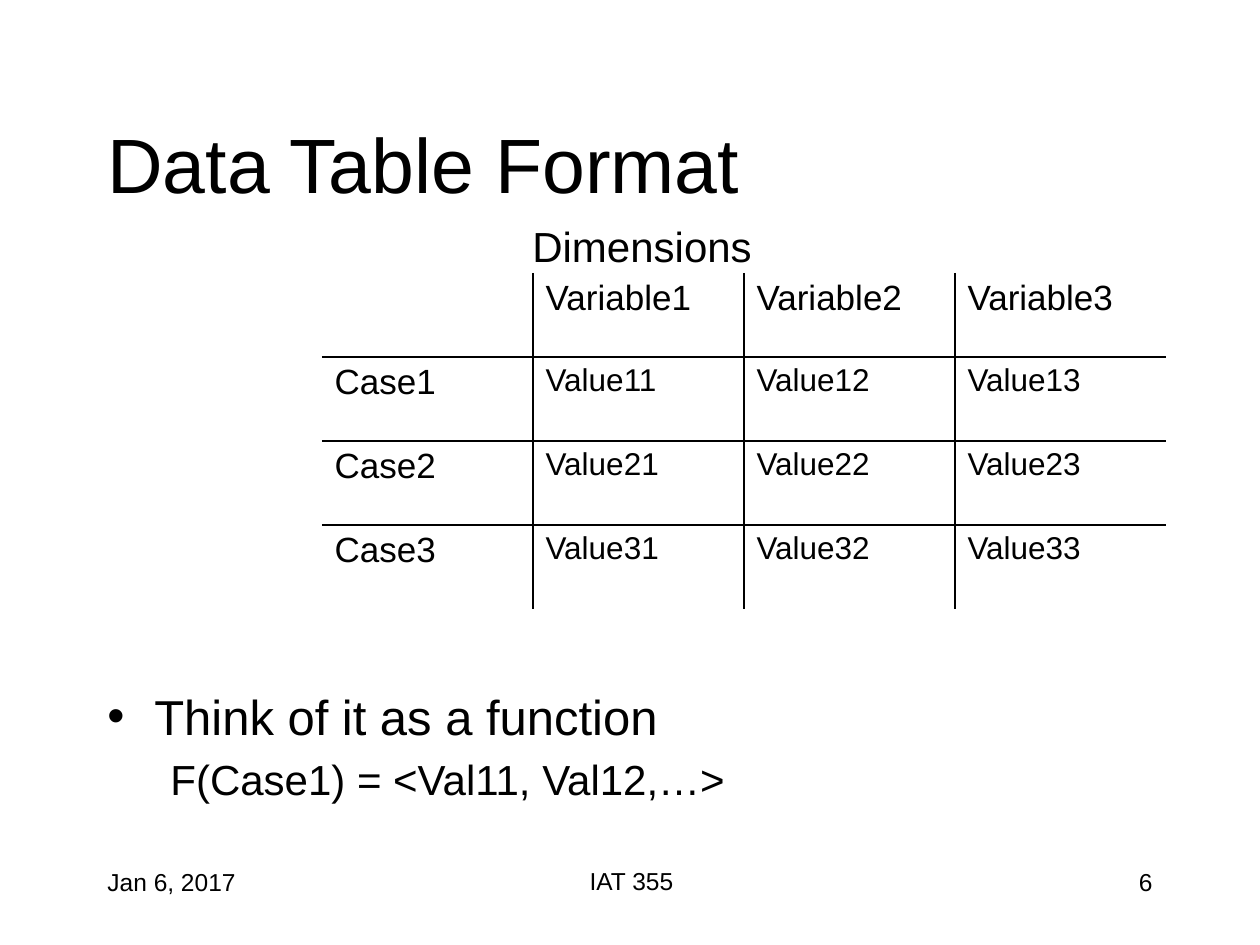
from lxml import etree
from pptx import Presentation
from pptx.dml.color import RGBColor
from pptx.enum.text import MSO_ANCHOR, PP_ALIGN
from pptx.oxml.ns import qn
from pptx.util import Emu, Pt

PX = 914400 // 126
SLIDE_W, SLIDE_H = 1260, 945
FONT = "Arial"
COLORS = {"ink": "000000", "paper": "FFFFFF"}
LEFT, CENTER, RIGHT = PP_ALIGN.LEFT, PP_ALIGN.CENTER, PP_ALIGN.RIGHT
TOP, MIDDLE = MSO_ANCHOR.TOP, MSO_ANCHOR.MIDDLE
PLAIN_TABLE = "{2D5ABB26-0587-4C30-8999-92F81FD0307C}"

DATA = [
    ["", "Variable1", "Variable2", "Variable3"],
    ["Case1", "Value11", "Value12", "Value13"],
    ["Case2", "Value21", "Value22", "Value23"],
    ["Case3", "Value31", "Value32", "Value33"],
]


def px(length):
    return Emu(length * PX)


def write(paragraph, text, size=14, align=LEFT, before=0, indent=0, bullet=None):
    """Fill a paragraph; a bullet hangs to the left of the indent."""
    paragraph.alignment = align
    paragraph.space_before = Pt(before)
    run = paragraph.add_run()
    run.text = text
    run.font.name = FONT
    run.font.size = Pt(size)
    run.font.color.rgb = RGBColor.from_string(COLORS["ink"])
    if indent:
        props = paragraph._p.get_or_add_pPr()
        props.set("marL", str(px(indent)))
        props.set("indent", str(-px(indent) if bullet else 0))
        if bullet:
            etree.SubElement(props, qn("a:buFont"), typeface=FONT)
            etree.SubElement(props, qn("a:buChar"), char=bullet)


def add_text_frame(slide, left, top, width, height, anchor=TOP):
    box = slide.shapes.add_textbox(px(left), px(top), px(width), px(height))
    frame = box.text_frame
    frame.word_wrap = True
    frame.vertical_anchor = anchor
    return frame


def add_label(slide, text, left, top, width, height, anchor=TOP, **style):
    frame = add_text_frame(slide, left, top, width, height, anchor)
    write(frame.paragraphs[0], text, **style)


def set_borders(cell, sides):
    """Rule the named sides (of L, R, T, B) and leave the others open."""
    props = cell._tc.get_or_add_tcPr()
    for side in "LRTB":
        line = etree.SubElement(props, qn("a:ln" + side), w=str(Pt(1)))
        if side in sides:
            fill = etree.SubElement(line, qn("a:solidFill"))
            etree.SubElement(fill, qn("a:srgbClr"), val=COLORS["ink"])
        else:
            etree.SubElement(line, qn("a:noFill"))


def add_data_table(slide, rows, left, top, col_width, row_height):
    n_rows, n_cols = len(rows), len(rows[0])
    frame = slide.shapes.add_table(n_rows, n_cols, px(left), px(top),
                                   px(col_width * n_cols), px(row_height * n_rows))
    table = frame.table
    table.first_row = table.horz_banding = False
    table._tbl.tblPr.find(qn("a:tableStyleId")).text = PLAIN_TABLE
    for column in table.columns:
        column.width = px(col_width)
    for r, row in enumerate(rows):
        table.rows[r].height = px(row_height)
        for c, text in enumerate(row):
            cell = table.cell(r, c)
            # Only the inner grid is ruled
            inner = {"L": c > 0, "R": c < n_cols - 1, "T": r > 0, "B": r < n_rows - 1}
            set_borders(cell, [side for side, ruled in inner.items() if ruled])
            cell.fill.background()
            if text:
                is_heading = r == 0 or c == 0
                write(cell.text_frame.paragraphs[0], text, size=20 if is_heading else 18)


def main():
    prs = Presentation()
    prs.slide_width, prs.slide_height = px(SLIDE_W), px(SLIDE_H)
    slide = prs.slides.add_slide(prs.slide_layouts[6])
    background = slide.background.fill
    background.solid()
    background.fore_color.rgb = RGBColor.from_string(COLORS["paper"])

    # Footer: date, course, page number
    add_label(slide, "Jan 6, 2017", 95, 861, 262, 63)
    add_label(slide, "IAT 355", 432, 860, 399, 63, align=CENTER)
    add_label(slide, "6", 903, 861, 262, 63, align=RIGHT)

    # Title
    add_label(slide, "Data Table Format", 95, 84, 1071, 158, anchor=MIDDLE, size=44)

    # Explanation
    body = add_text_frame(slide, 95, 680, 1002, 159)
    write(body.paragraphs[0], "Think of it as a function",
          size=28, before=4, indent=47, bullet="•")
    write(body.add_paragraph(), "F(Case1) = <Val11, Val12,…>",
          size=24, before=5, indent=63)

    # Data table under its heading
    add_data_table(slide, DATA, left=322, top=273, col_width=211, row_height=84)
    add_label(slide, "Dimensions", 520, 214, 595, 63, size=24)

    prs.save("out.pptx")


if __name__ == "__main__":
    main()
